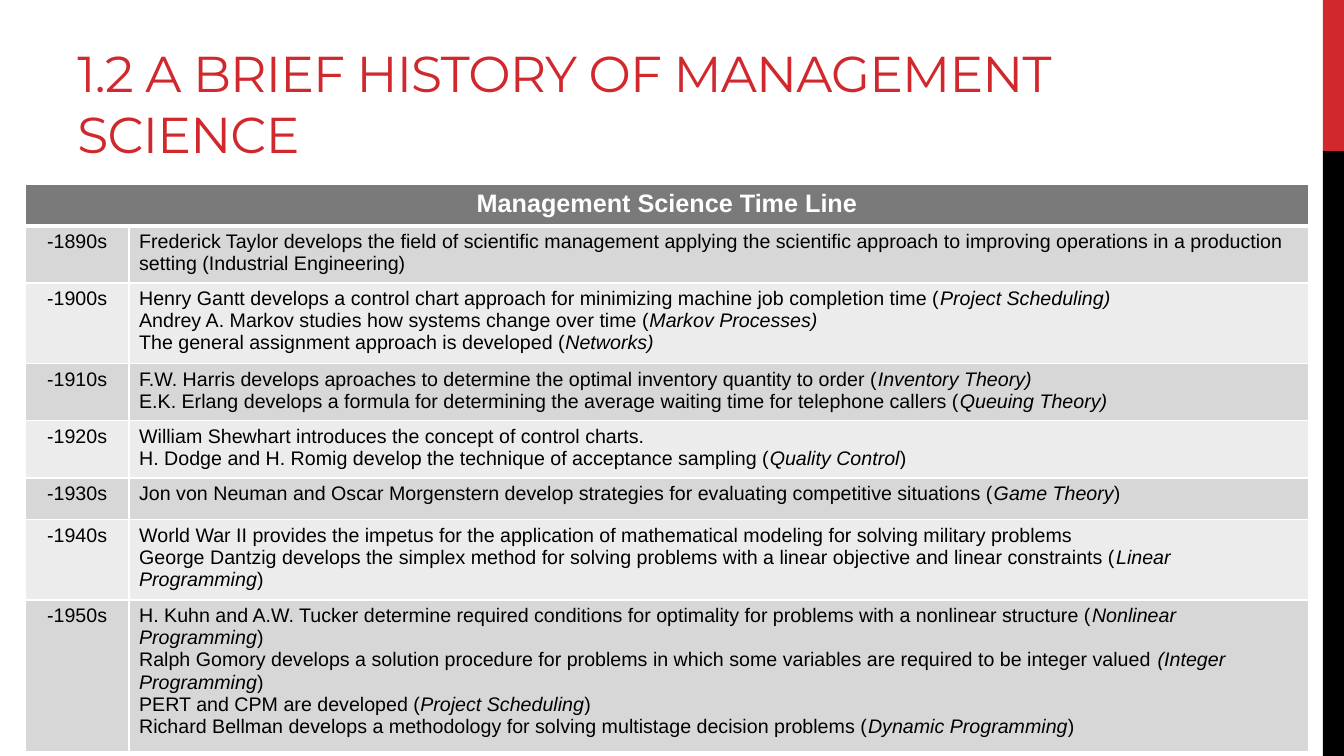
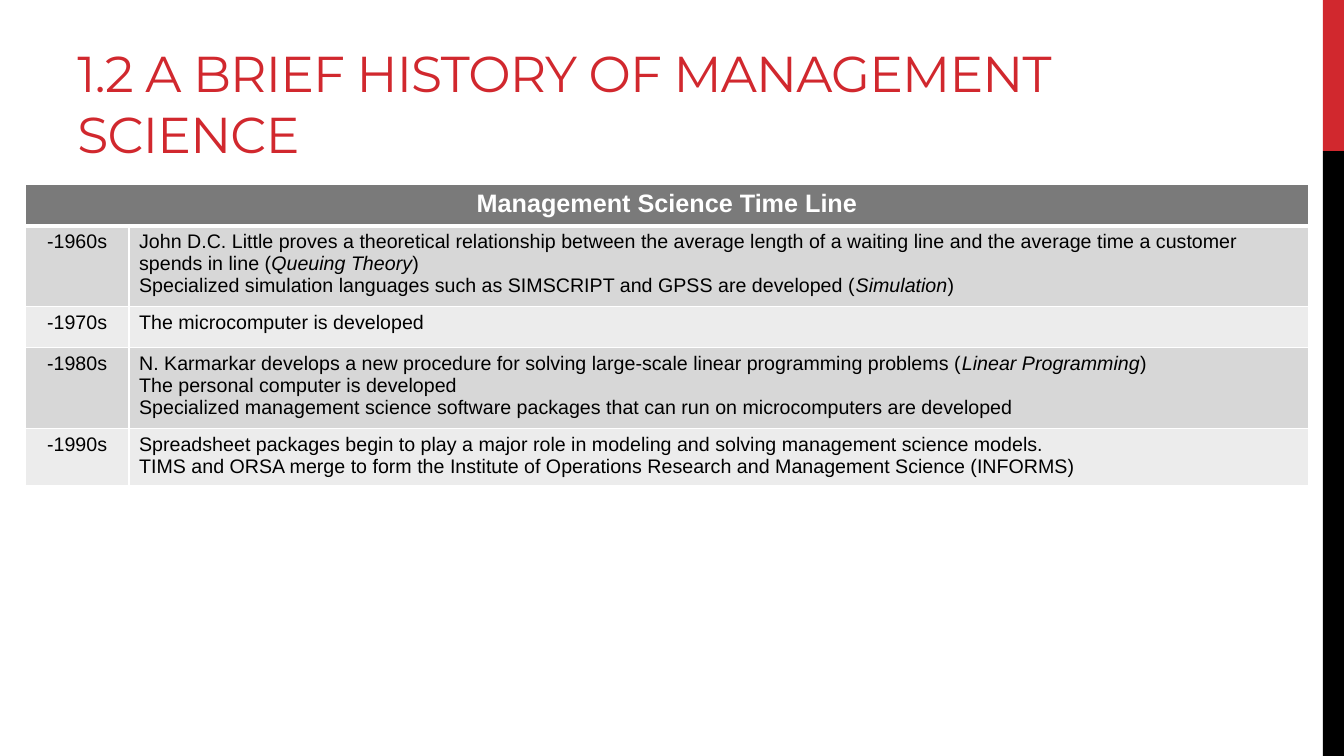
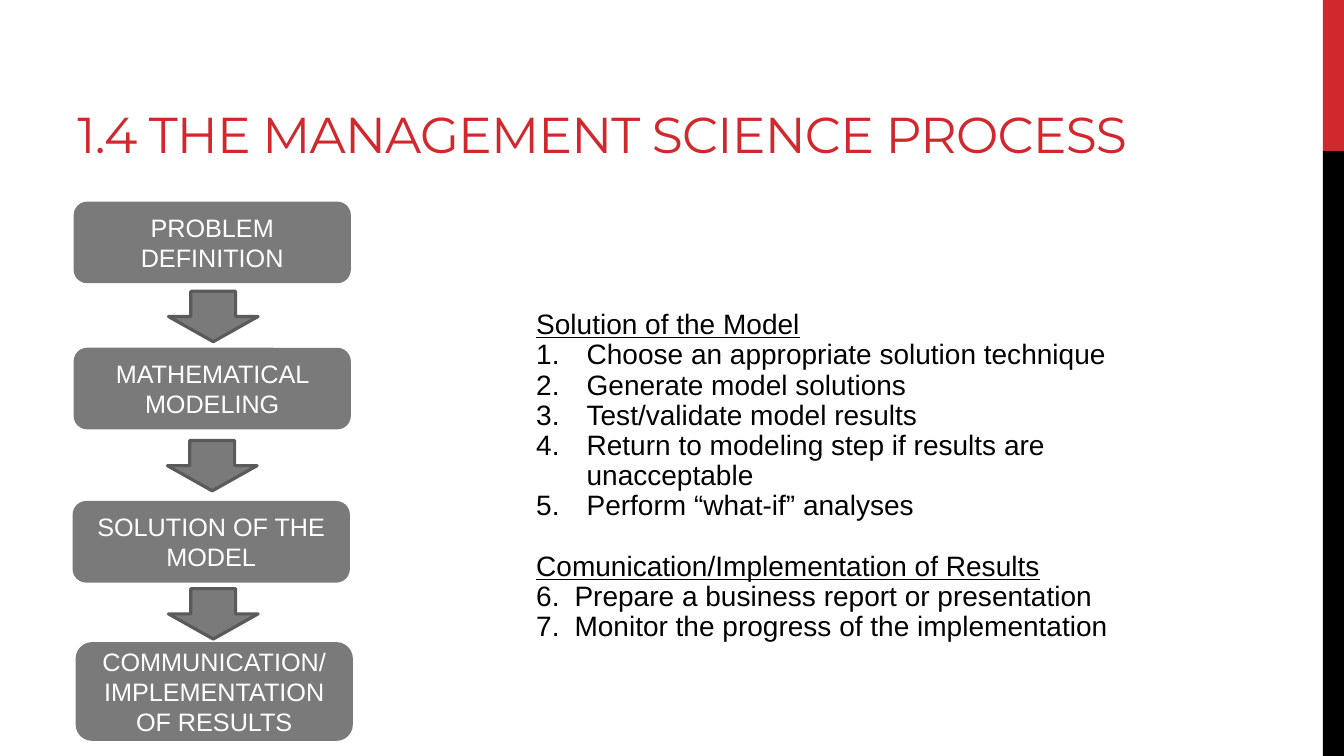
from lxml import etree
from pptx import Presentation
from pptx.dml.color import RGBColor
from pptx.enum.shapes import MSO_SHAPE
from pptx.enum.text import MSO_ANCHOR, PP_ALIGN
from pptx.oxml.ns import qn
from pptx.util import Inches, Pt

RECTANGLE = MSO_SHAPE.RECTANGLE
ROUNDED = MSO_SHAPE.ROUNDED_RECTANGLE
DOWN_ARROW = MSO_SHAPE.DOWN_ARROW
CENTER, LEFT = PP_ALIGN.CENTER, PP_ALIGN.LEFT
TOP, MIDDLE, BOTTOM = MSO_ANCHOR.TOP, MSO_ANCHOR.MIDDLE, MSO_ANCHOR.BOTTOM

WIDTH, HEIGHT = 13.33, 7.5
RED, BLACK, WHITE = "D1282E", "000000", "FFFFFF"
GRAY, DARK_GRAY = "7A7A7A", "5A5A5A"
ROW_FILLS = ("D7D7D7", "ECECEC")
BODY_FONT, TITLE_FONT = "Arial", "Montserrat"

HISTORY_TITLE = "1.2 A BRIEF HISTORY OF MANAGEMENT SCIENCE"
PROCESS_TITLE = "1.4 THE MANAGEMENT SCIENCE PROCESS"
TABLE_HEADING = "Management Science Time Line"

EARLY_DECADES = [
    ("-1890s", [
        ["Frederick Taylor develops the field of scientific management applying the scientific "
         "approach to improving operations in a production setting (Industrial Engineering)"]]),
    ("-1900s", [
        ["Henry Gantt develops a control chart approach for minimizing machine job completion time (",
         "Project Scheduling)"],
        ["Andrey A. Markov studies how systems change over time (", "Markov Processes)"],
        ["The general assignment approach is developed (", "Networks)"]]),
    ("-1910s", [
        ["F.W. Harris develops aproaches to determine the optimal inventory quantity to order (",
         "Inventory Theory)"],
        ["E.K. Erlang develops a formula for determining the average waiting time for telephone callers (",
         "Queuing Theory)"]]),
    ("-1920s", [
        ["William Shewhart introduces the concept of control charts."],
        ["H. Dodge and H. Romig develop the technique of acceptance sampling (",
         "Quality Control", ")"]]),
    ("-1930s", [
        ["Jon von Neuman and Oscar Morgenstern develop strategies for evaluating competitive situations (",
         "Game Theory", ")"]]),
    ("-1940s", [
        ["World War II provides the impetus for the application of mathematical modeling "
         "for solving military problems"],
        ["George Dantzig develops the simplex method for solving problems with a linear objective "
         "and linear constraints (", "Linear Programming", ")"]]),
    ("-1950s", [
        ["H. Kuhn and A.W. Tucker determine required conditions for optimality for problems "
         "with a nonlinear structure (", "Nonlinear Programming", ")"],
        ["Ralph Gomory develops a solution procedure for problems in which some variables "
         "are required to be integer valued ", "(Integer Programming", ")"],
        ["PERT and CPM are developed (", "Project Scheduling", ")"],
        ["Richard Bellman develops a methodology for solving multistage decision problems (",
         "Dynamic Programming", ")"]]),
]
LATE_DECADES = [
    ("-1960s", [
        ["John D.C. Little proves a theoretical relationship between the average length of a waiting "
         "line and the average time a customer spends in line (", "Queuing Theory", ")"],
        ["Specialized simulation languages such as SIMSCRIPT and GPSS are developed (",
         "Simulation", ")"]]),
    ("-1970s", [["The microcomputer is developed"]]),
    ("-1980s", [
        ["N. Karmarkar develops a new procedure for solving large-scale linear programming problems (",
         "Linear Programming", ")"],
        ["The personal computer is developed"],
        ["Specialized management science software packages that can run on microcomputers are developed"]]),
    ("-1990s", [
        ["Spreadsheet packages begin to play a major role in modeling and solving management science models."],
        ["TIMS and ORSA merge to form the Institute of Operations Research and Management Science (INFORMS)"]]),
]
STEPS = [
    ("PROBLEM DEFINITION", (0.73, 2, 2.75, 0.81)),
    ("MATHEMATICAL MODELING", (0.73, 3.45, 2.75, 0.81)),
    ("SOLUTION OF THE MODEL", (0.72, 4.97, 2.75, 0.81)),
    ("COMMUNICATION/ IMPLEMENTATION OF RESULTS", (0.75, 6.37, 2.75, 0.98)),
]
ARROWS = [(1.67, 2.89), (1.66, 4.37), (1.67, 5.84)]
SECTIONS = [
    ("Solution of the Model", 0.5, [
        "Choose an appropriate solution technique",
        "Generate model solutions",
        "Test/validate model results",
        "Return to modeling step if results are unacceptable",
        "Perform “what-if” analyses"]),
    ("Comunication/Implementation of Results", 0.38, [
        "Prepare a business report or presentation",
        "Monitor the progress of the implementation"]),
]


def color(value):
    """Turn a hex string into a colour."""
    return RGBColor.from_string(value)


def add_span(para, text, size, ink, font=BODY_FONT, **styles):
    """Append one run with its font, size, colour and styles."""
    span = para.add_run()
    span.text = text
    span.font.name, span.font.size = font, Pt(size)
    span.font.color.rgb = color(ink)
    for name, value in styles.items():
        setattr(span.font, name, value)
    return span


def add_block(page, kind, box, fill, line=None):
    """Draw a flat preset shape."""
    shape = page.shapes.add_shape(kind, *map(Inches, box))
    shape.shadow.inherit = False
    shape.fill.solid()
    shape.fill.fore_color.rgb = color(fill)
    if line:
        shape.line.color.rgb = color(line)
        shape.line.width = Pt(2.25)
    else:
        shape.line.fill.background()
    return shape


def add_text(page, box, anchor):
    """Add a wrapping text box and return its frame."""
    frame = page.shapes.add_textbox(*map(Inches, box)).text_frame
    frame.word_wrap = True
    frame.vertical_anchor = anchor
    return frame


def add_page(deck, title, title_width):
    """Start a slide with the side bands and its title."""
    page = deck.slides.add_slide(deck.slide_layouts[6])
    band, split = 0.21, HEIGHT / 5
    add_block(page, RECTANGLE, (WIDTH - band, 0, band, split), RED)
    add_block(page, RECTANGLE, (WIDTH - band, split, band, HEIGHT - split), BLACK)
    frame = add_text(page, (0.67, 0.17, title_width, 1.5), BOTTOM)
    span = add_span(frame.paragraphs[0], title, 36, RED, TITLE_FONT)
    span.font._element.set("spc", "-60")
    return page


def style_cell(cell, fill, bottom=1):
    """Fill a cell and give it white borders."""
    properties = cell._tc.get_or_add_tcPr()
    for side, width in (("L", 1), ("R", 1), ("T", 1), ("B", bottom)):
        border = etree.SubElement(properties, qn(f"a:ln{side}"), w=str(Pt(width)))
        paint = etree.SubElement(border, qn("a:solidFill"))
        etree.SubElement(paint, qn("a:srgbClr"), val=WHITE)
    cell.fill.solid()
    cell.fill.fore_color.rgb = color(fill)


def write_cell(cell, lines, align, size=14, ink=BLACK, bold=False):
    """Write lines of alternating upright and italic runs."""
    frame = cell.text_frame
    for number, line in enumerate(lines):
        para = frame.add_paragraph() if number else frame.paragraphs[0]
        para.alignment = align
        for position, text in enumerate(line):
            add_span(para, text, size, ink, bold=bold, italic=position % 2 == 1)


def add_timeline(page, left, top, decades):
    """Place the time line table, whose rows grow with their text."""
    columns, row_height = (1.03, 11.7), 0.41
    count = len(decades) + 1
    table = page.shapes.add_table(
        count, 2, *map(Inches, (left, top, sum(columns), row_height * count))).table
    for column, width in zip(table.columns, columns):
        column.width = Inches(width)
    for cell in table.rows[0].cells:
        style_cell(cell, GRAY, bottom=3)
    heading = table.cell(0, 0)
    heading.merge(table.cell(0, 1))
    write_cell(heading, [[TABLE_HEADING]], CENTER, 18, WHITE, True)
    for row, (decade, events) in enumerate(decades, 1):
        for column, (lines, align) in enumerate((([[decade]], CENTER), (events, LEFT))):
            cell = table.cell(row, column)
            style_cell(cell, ROW_FILLS[(row - 1) % 2])
            write_cell(cell, lines, align)


def add_flow(page):
    """Draw the process steps and the arrows between them."""
    for label, box in STEPS:
        frame = add_block(page, ROUNDED, box, GRAY).text_frame
        frame.word_wrap = True
        frame.vertical_anchor = MIDDLE
        para = frame.paragraphs[0]
        para.alignment = CENTER
        add_span(para, label, 18, WHITE)
    for left, top in ARROWS:
        add_block(page, DOWN_ARROW, (left, top, 0.89, 0.5), GRAY, DARK_GRAY)


def number_item(para, indent, start):
    """Give a paragraph a hanging automatic number."""
    properties = para._p.get_or_add_pPr()
    properties.set("marL", str(Inches(indent)))
    properties.set("indent", str(-Inches(indent)))
    etree.SubElement(properties, qn("a:buFont"), typeface=BODY_FONT)
    etree.SubElement(properties, qn("a:buAutoNum"), type="arabicPeriod", startAt=str(start))


def add_sections(page, box):
    """Write underlined headings with items numbered throughout."""
    frame = add_text(page, box, TOP)
    start = 1
    for section, (heading, indent, items) in enumerate(SECTIONS):
        para = frame.add_paragraph() if section else frame.paragraphs[0]
        para.line_spacing = 0.9
        if section:
            para.space_before = Pt(21.6)
        add_span(para, heading, 20, BLACK, underline=True)
        for item in items:
            para = frame.add_paragraph()
            para.line_spacing = 0.9
            number_item(para, indent, start)
            add_span(para, item, 20, BLACK)
        start += len(items)


def main():
    """Build and save the deck."""
    deck = Presentation()
    deck.slide_width, deck.slide_height = Inches(WIDTH), Inches(HEIGHT)
    for decades in (EARLY_DECADES, LATE_DECADES):
        add_timeline(add_page(deck, HISTORY_TITLE, 10.54), 0.25, 1.83, decades)
    page = add_page(deck, PROCESS_TITLE, 12.24)
    add_flow(page)
    add_sections(page, (5.22, 3.03, 6.94, 3.5))
    deck.save("out.pptx")


if __name__ == "__main__":
    main()
